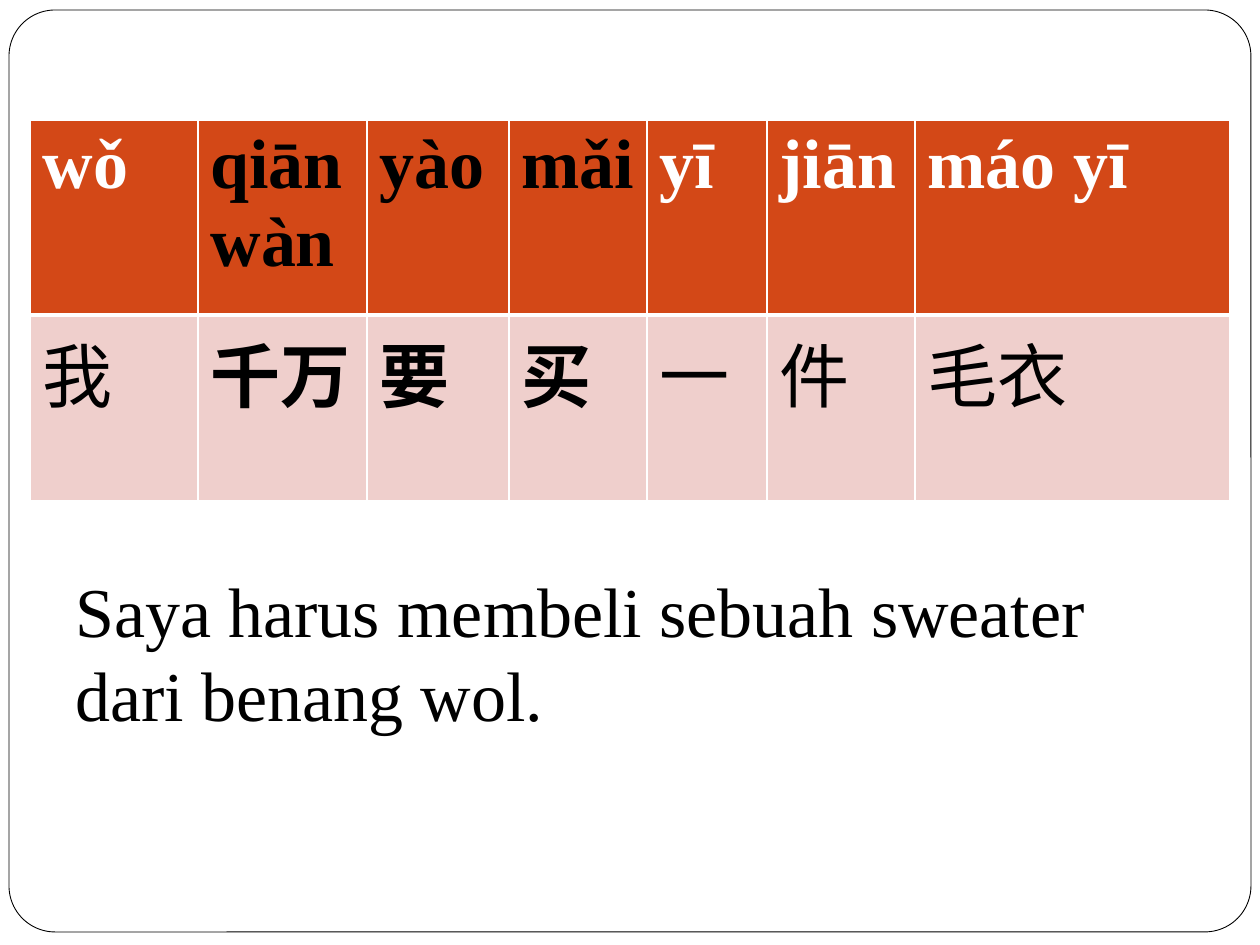
from lxml import etree
from pptx import Presentation
from pptx.dml.color import RGBColor
from pptx.enum.shapes import MSO_SHAPE
from pptx.oxml.ns import qn
from pptx.util import Pt

ROUND = MSO_SHAPE.ROUNDED_RECTANGLE
SCALE = 914400 / 126
FONT = "Times New Roman"
SIZE = 40
HUES = {"white": "FFFFFF", "black": "000000", "head": "D34817", "body": "EFCFCC"}
COLS = [168, 169, 142, 138, 120, 148, 315]
ROWS = [195, 186]
WORDS = [
    ("wǒ", "我", False),
    ("qiān wàn", "千万", True),
    ("yào", "要", True),
    ("mǎi", "买", True),
    ("yī", "一", False),
    ("jiān", "件", False),
    ("máo yī", "毛衣", False),
]


def px(num):
    return round(num * SCALE)


def hue(name):
    return RGBColor.from_string(HUES[name])


class Page:
    def __init__(self, deck):
        self.slide = deck.slides.add_slide(deck.slide_layouts[6])
        self.shapes = self.slide.shapes

    def run(self, para, text, color, bold=False):
        run = para.add_run()
        run.text = text
        run.font.name = FONT
        run.font.size = Pt(SIZE)
        run.font.bold = bold
        run.font.color.rgb = hue(color)

    def frame(self, box, curve):
        shape = self.shapes.add_shape(ROUND, *map(px, box))
        shape.adjustments[0] = curve
        shape.shadow.inherit = False
        shape.fill.solid()
        shape.fill.fore_color.rgb = hue("white")
        shape.line.color.rgb = hue("black")
        shape.line.width = Pt(0.5)

    def text(self, box, words):
        frame = self.shapes.add_textbox(*map(px, box)).text_frame
        frame.word_wrap = True
        para = frame.paragraphs[0]
        para.space_before = Pt(5.8)
        self.run(para, words, "black")

    def edge(self, cell, side, width):
        props = cell._tc.get_or_add_tcPr()
        line = etree.SubElement(props, qn("a:" + side), w=str(Pt(width)))
        fill = etree.SubElement(line, qn("a:solidFill"))
        etree.SubElement(fill, qn("a:srgbClr"), val=HUES["white"])

    def cell(self, cell, text, color, bold, fill, top, base):
        for side, width in (("lnL", 1), ("lnR", 1), ("lnT", top), ("lnB", base)):
            self.edge(cell, side, width)
        cell.fill.solid()
        cell.fill.fore_color.rgb = hue(fill)
        self.run(cell.text_frame.paragraphs[0], text, color, bold)

    def table(self, left, top, words):
        box = (left, top, sum(COLS), sum(ROWS))
        grid = self.shapes.add_table(len(ROWS), len(COLS), *map(px, box)).table
        for row, high in zip(grid.rows, ROWS):
            row.height = px(high)
        for col, wide in zip(grid.columns, COLS):
            col.width = px(wide)
        for num, (sound, sign, key) in enumerate(words):
            color = "black" if key else "white"
            self.cell(grid.cell(0, num), sound, color, True, "head", 1, 3)
            self.cell(grid.cell(1, num), sign, "black", key, "body", 3, 1)


def main():
    deck = Presentation()
    deck.slide_width = px(1260)
    deck.slide_height = px(945)
    page = Page(deck)
    page.frame((9, 10, 1242, 922), 0.05)
    page.text((63, 561, 1134, 284), "Saya harus membeli sebuah sweater dari benang wol.")
    page.table(30, 120, WORDS)
    deck.save("out.pptx")


if __name__ == "__main__":
    main()
